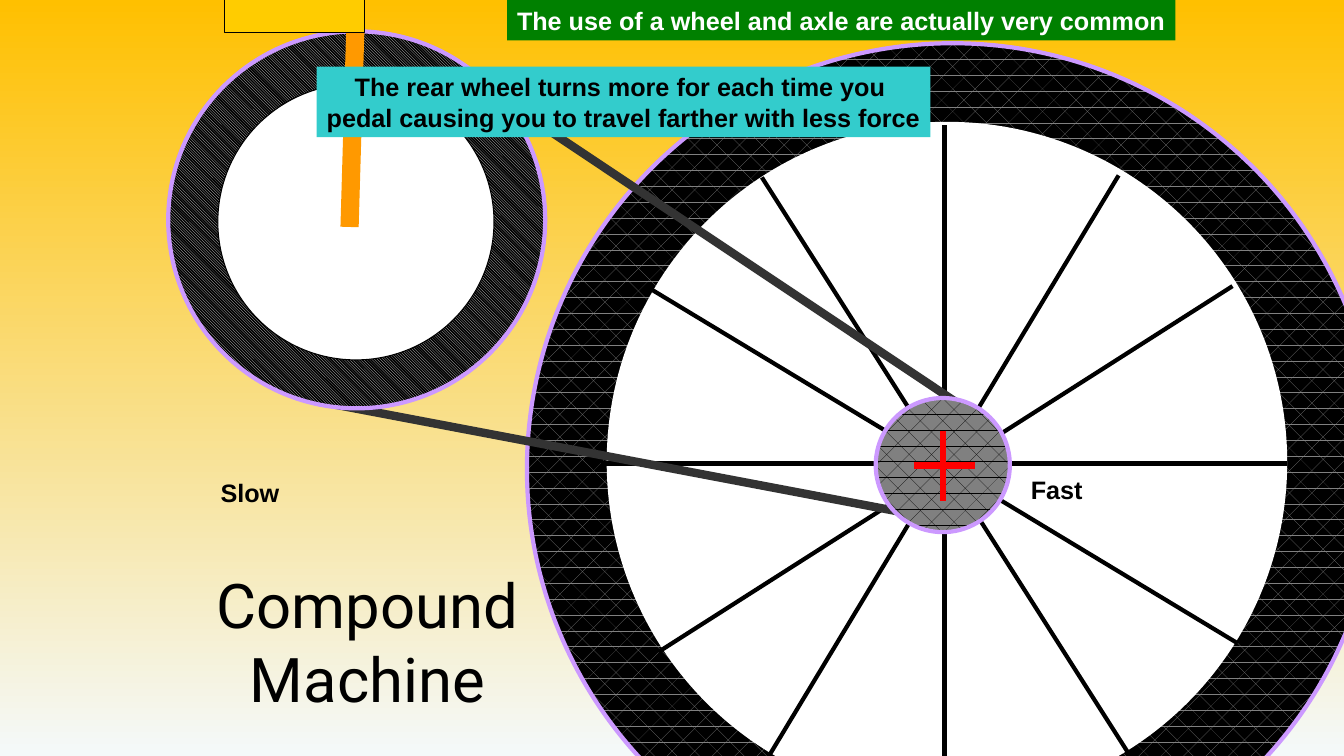
"""Build the slide that explains a bicycle as a compound machine."""
from dataclasses import dataclass

from lxml import etree
from pptx import Presentation
from pptx.dml.color import RGBColor
from pptx.enum import dml, shapes, text
from pptx.oxml.ns import qn
from pptx.util import Cm, Pt

SIZE = (33.87, 19.05)
TITLE = ("Compound Machine", (2.79, 15.27, 12.95, 1.75))
REAR_TYRE = (13.28, 1.09, 21.46, 21.46)
REAR_RIM = (15.29, 3.07, 17.15, 17.15)
REAR_HUB = (22.07, 10.03, 3.38, 3.38)
FRONT_GEAR = (4.24, 0.79, 9.5, 9.5)
FRONT_CENTRE = (5.49, 2.11, 6.96, 6.96)
PEDAL = (5.66, 0, 3.53, 0.81)
CRANK = [(8.81, 5.72), (8.97, 0.23)]
SPOKES = [
    (23.8, 3.15, 23.8, 20.32),
    (32.44, 11.68, 15.14, 11.68),
    (28.19, 4.42, 19.33, 19.13),
    (31.19, 16.21, 16.36, 7.26),
    (31.06, 7.21, 16.59, 16.43),
    (28.5, 19.08, 19.2, 4.47),
]
CHAIN = [(11.84, 1.96, 24.18, 10.19), (8.41, 10.19, 24.08, 13.16)]
CROSS = [(23.77, 10.85, 23.77, 12.62), (24.56, 11.73, 23.04, 11.73)]
LABELS = [
    ("Slow", (5.31, 11.91, 5.36, 1.02)),
    ("Fast", (25.73, 11.84, 5.36, 1.02)),
]
USE_BANNER = (["The use of a wheel and axle are actually very common"],
              (12.78, 0, 16.84, 1.02))
FORCE_BANNER = (["The rear wheel turns more for each time you ",
                 "pedal causing you to travel farther with less force"],
                (7.98, 1.68, 15.47, 1.78))


@dataclass(frozen=True)
class Theme:
    """Colours, fonts and type sizes of the slide."""
    sky: str = "FFC000"
    ground: str = "F4F9FA"
    black: str = "000000"
    white: str = "FFFFFF"
    grey: str = "808080"
    pale: str = "DDDDDD"
    lilac: str = "CC99FF"
    chain: str = "333333"
    red: str = "FF0000"
    pedal: str = "FFCC00"
    crank: str = "FF9900"
    green: str = "008000"
    cyan: str = "33CCCC"
    title_font: str = "Roboto"
    body_font: str = "Arial"
    title_size: int = 44
    body_size: int = 18


THEME = Theme()
OVAL = shapes.MSO_SHAPE.OVAL
RECTANGLE = shapes.MSO_SHAPE.RECTANGLE


def rgb(colour):
    """Return a colour object for a hex string."""
    return RGBColor.from_string(colour)


def set_line(line, colour, width):
    """Give a line its colour and width in points."""
    line.color.rgb = rgb(colour)
    line.width = Pt(width)


def set_font(para, name, size, colour, bold=False):
    """Set the font of a whole paragraph."""
    font = para.font
    font.name, font.size, font.bold = name, Pt(size), bold
    font.color.rgb = rgb(colour)


def add_figure(page, kind, place, fill, outline=None, width=0.75):
    """Add a preset shape; fill is a colour or (pattern, front, back)."""
    figure = page.shapes.add_shape(kind, *map(Cm, place))
    figure.shadow.inherit = False
    if isinstance(fill, str):
        figure.fill.solid()
        figure.fill.fore_color.rgb = rgb(fill)
    else:
        pattern, front, back = fill
        figure.fill.patterned()
        figure.fill.pattern = pattern
        figure.fill.fore_color.rgb = rgb(front)
        figure.fill.back_color.rgb = rgb(back)
    if outline:
        set_line(figure.line, outline, width)
    else:
        figure.line.fill.background()
    return figure


def add_lines(target, segments, colour, width):
    """Draw straight lines in a page or a group."""
    for segment in segments:
        line = target.shapes.add_connector(shapes.MSO_CONNECTOR.STRAIGHT, *map(Cm, segment))
        set_line(line.line, colour, width)
        etree.SubElement(line._element.spPr, qn("a:effectLst"))


def write(box, lines, colour, align, wrap):
    """Write bold body lines in a box."""
    frame = box.text_frame
    frame.word_wrap = wrap
    frame.auto_size = text.MSO_AUTO_SIZE.SHAPE_TO_FIT_TEXT
    frame.text = "\n".join(lines)
    for para in frame.paragraphs:
        para.alignment = align
        set_font(para, THEME.body_font, THEME.body_size, colour, True)


def add_banner(page, banner, fill, colour):
    """Add a filled box with centred text."""
    lines, place = banner
    box = add_figure(page, RECTANGLE, place, fill)
    write(box, lines, colour, text.PP_ALIGN.CENTER, False)


def add_title(page):
    """Place and format the title."""
    words, place = TITLE
    title = page.shapes.title
    title.left, title.top, title.width, title.height = map(Cm, place)
    frame = title.text_frame
    frame.text = words
    frame.word_wrap = True
    frame.auto_size = text.MSO_AUTO_SIZE.NONE
    frame.vertical_anchor = text.MSO_ANCHOR.MIDDLE
    frame.paragraphs[0].alignment = text.PP_ALIGN.CENTER
    set_font(frame.paragraphs[0], THEME.title_font, THEME.title_size, THEME.black)


def paint_background(page):
    """Fade the page from sky to ground."""
    fill = page.background.fill
    fill.gradient()
    fill.gradient_angle = 270
    for stop, colour in zip(fill.gradient_stops, (THEME.sky, THEME.ground)):
        stop.color.rgb = rgb(colour)


def add_crank(page):
    """Draw the crank between the front gear and the pedal."""
    start, end = [tuple(map(Cm, point)) for point in CRANK]
    builder = page.shapes.build_freeform(*start)
    builder.add_line_segments([end], close=False)
    crank = builder.convert_to_shape()
    crank.shadow.inherit = False
    crank.fill.solid()
    crank.fill.fore_color.rgb = rgb(THEME.pedal)
    set_line(crank.line, THEME.crank, 13)


def main():
    """Build and save the deck."""
    deck = Presentation()
    deck.slide_width, deck.slide_height = map(Cm, SIZE)
    page = deck.slides.add_slide(deck.slide_layouts[5])
    divot = dml.MSO_PATTERN.DIVOT
    diagonal = dml.MSO_PATTERN.DARK_DOWNWARD_DIAGONAL
    paint_background(page)
    add_title(page)
    add_figure(page, OVAL, REAR_TYRE, (divot, THEME.grey, THEME.black), THEME.lilac, 3)
    add_figure(page, OVAL, REAR_RIM, THEME.white)
    add_lines(page.shapes.add_group_shape(), SPOKES, THEME.black, 3)
    add_lines(page, CHAIN, THEME.chain, 6)
    add_figure(page, OVAL, FRONT_GEAR, (diagonal, THEME.pale, THEME.black), THEME.lilac, 3)
    add_figure(page, OVAL, REAR_HUB, (divot, THEME.black, THEME.grey), THEME.lilac, 3)
    add_lines(page.shapes.add_group_shape(), CROSS, THEME.red, 4.5)
    add_figure(page, OVAL, FRONT_CENTRE, THEME.white, THEME.black)
    add_crank(page)
    add_figure(page, RECTANGLE, PEDAL, THEME.pedal, THEME.black)
    for words, place in LABELS:
        box = page.shapes.add_textbox(*map(Cm, place))
        write(box, [words], THEME.black, text.PP_ALIGN.LEFT, True)
    add_banner(page, USE_BANNER, THEME.green, THEME.white)
    add_banner(page, FORCE_BANNER, THEME.cyan, THEME.black)
    deck.save("out.pptx")


if __name__ == "__main__":
    main()
